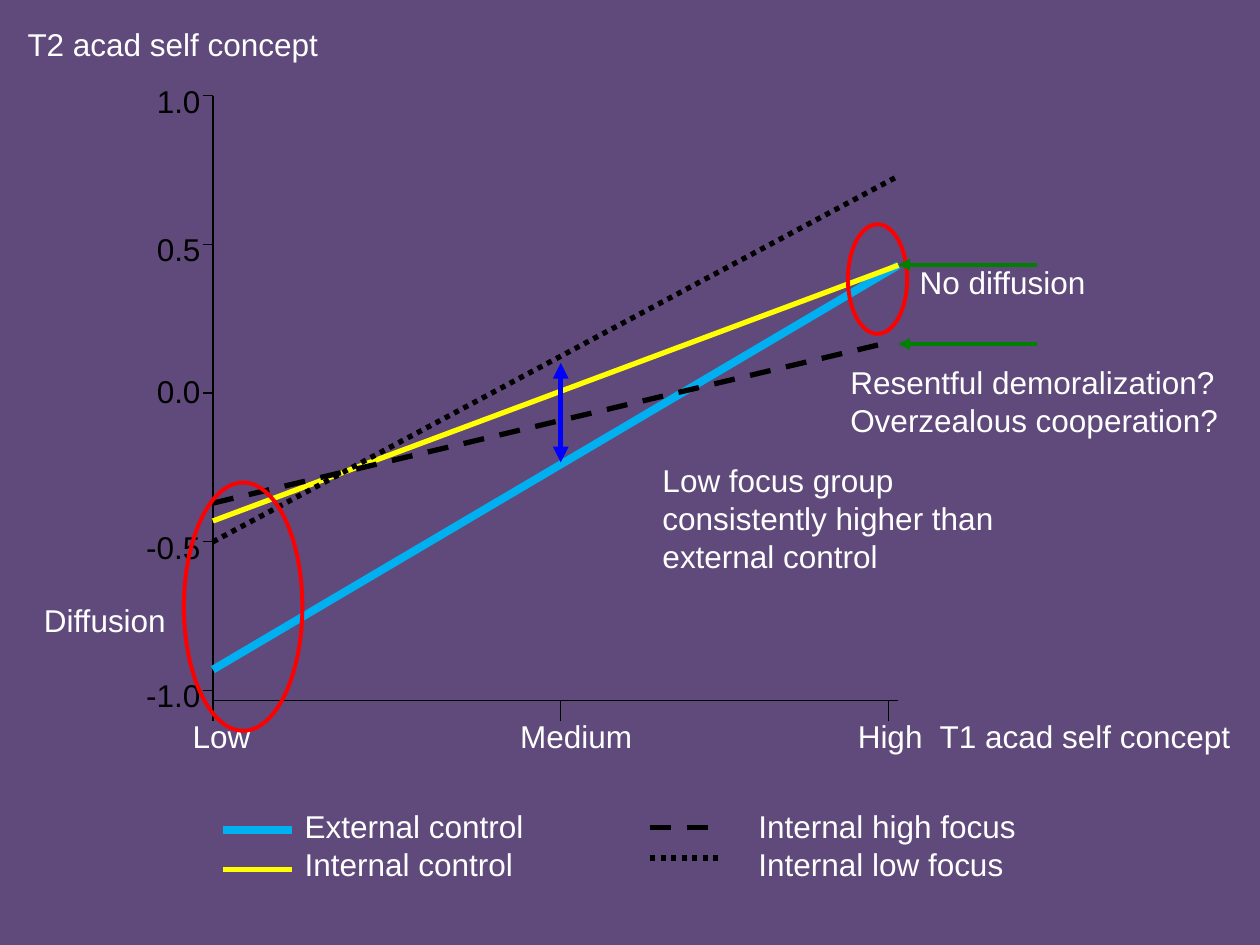
from dataclasses import dataclass

from lxml.etree import SubElement
from pptx import Presentation
from pptx.dml.color import RGBColor as RGB
from pptx.enum.dml import MSO_LINE as DASH
from pptx.enum.shapes import MSO_CONNECTOR as CONNECTOR, MSO_SHAPE as SHAPE
from pptx.enum.text import MSO_AUTO_SIZE as AUTO_SIZE, PP_ALIGN as ALIGN
from pptx.oxml.ns import qn
from pptx.util import Inches, Pt


@dataclass(frozen=True)
class Theme:
    background: str = "604A7B"
    text: str = "FFFFFF"
    axis: str = "000000"
    external: str = "00B0F0"
    internal: str = "FFFF00"
    focus: str = "000000"
    ring: str = "FF0000"
    pointer: str = "008000"
    gap: str = "0000FF"
    font: str = "Arial"
    size: int = 18
    hairline: float = 0.75
    medium: float = 2.25
    thick: float = 3
    heavy: float = 4.5


class Canvas:
    """Draws on one slide; lengths are cells of a 100 by 75 grid."""
    COLS, ROWS = 100, 75

    def __init__(self, prs, theme):
        self.theme = theme
        self.col = prs.slide_width / self.COLS
        self.row = prs.slide_height / self.ROWS
        self.slide = prs.slides.add_slide(prs.slide_layouts[6])
        fill = self.slide.background.fill
        fill.solid()
        fill.fore_color.rgb = RGB.from_string(theme.background)

    def place(self, x, y):
        return round(x * self.col), round(y * self.row)

    def line(self, start, end, color, width, dash=None, arrows=()):
        """arrows holds "headEnd" (at start) and/or "tailEnd" (at end)."""
        sp = self.slide.shapes.add_connector(
            CONNECTOR.STRAIGHT, *self.place(*start), *self.place(*end))
        sp.line.color.rgb = RGB.from_string(color)
        sp.line.width = Pt(width)
        if dash is not None:
            sp.line.dash_style = dash
        ln = sp.line._get_or_add_ln()
        for arrow in arrows:
            SubElement(ln, qn(f"a:{arrow}"), type="triangle")
        SubElement(sp._element.spPr, qn("a:effectLst"))

    def ring(self, x, y, w, h):
        sp = self.slide.shapes.add_shape(
            SHAPE.OVAL, *self.place(x, y), *self.place(w, h))
        sp.shadow.inherit = False
        sp.fill.background()
        sp.line.color.rgb = RGB.from_string(self.theme.ring)
        sp.line.width = Pt(self.theme.medium)

    def text(self, lines, x, y, w, h=4, color=None, align=ALIGN.LEFT, wrap=True):
        sp = self.slide.shapes.add_textbox(*self.place(x, y), *self.place(w, h))
        tf = sp.text_frame
        tf.word_wrap = wrap
        tf.auto_size = AUTO_SIZE.SHAPE_TO_FIT_TEXT
        for i, line in enumerate(lines):
            p = tf.add_paragraph() if i else tf.paragraphs[0]
            p.alignment = align
            r = p.add_run()
            r.text = line
            r.font.name = self.theme.font
            r.font.size = Pt(self.theme.size)
            r.font.color.rgb = RGB.from_string(color or self.theme.text)


LOW, MEDIUM, HIGH, PLOT_END = 16.9, 44.5, 70.5, 71.3
BASE = 55.6


def y_at(value):
    return 31.2 - 23.6 * value


def draw_axes(c):
    t = c.theme
    lines = [((LOW, BASE), (PLOT_END, BASE)), ((LOW, y_at(1)), (LOW, BASE))]
    lines += [((x, BASE), (x, BASE + 1.6)) for x in (LOW, MEDIUM, HIGH)]
    lines += [((LOW, y_at(v)), (LOW - 0.8, y_at(v))) for v in (1, 0.5, 0, -0.5, -1)]
    for start, end in lines:
        c.line(start, end, t.axis, t.hairline)


def draw_series(c):
    t = c.theme
    for first, last, end, color, width, dash in (
            (-0.93, 0.43, PLOT_END, t.external, t.heavy, None),
            (-0.43, 0.43, PLOT_END, t.internal, t.thick, None),
            (-0.5, 0.73, PLOT_END, t.focus, t.thick, DASH.ROUND_DOT),
            (-0.37, 0.17, HIGH, t.focus, t.thick, DASH.DASH)):
        c.line((LOW, y_at(first)), (end, y_at(last)), color, width, dash)


def draw_legend(c):
    t = c.theme
    for x, y, color, width, dash in (
            (17.7, 65.9, t.external, t.heavy, None),
            (17.7, 69, t.internal, t.thick, None),
            (51.6, 65.7, t.focus, t.thick, DASH.DASH),
            (51.6, 68.1, t.focus, t.thick, DASH.ROUND_DOT)):
        c.line((x, y), (x + 5.5, y), color, width, dash)
    c.text(["External control", "Internal control"], 23.2, 63.6, 24.6, 7)
    c.text(["Internal high focus", "Internal low focus"], 59.2, 63.6, 25.4, 7)


def draw_axis_labels(c):
    for value, lift in ((1, 1.6), (0.5, 1.6), (0, 2.2), (-0.5, 1.6), (-1, 1.6)):
        w = 6.3 if value < 0 else 5.5
        c.text([f"{value:.1f}"], LOW - w, y_at(value) - lift, w,
               color=c.theme.axis, align=ALIGN.RIGHT, wrap=False)
    for label, x, w in (("Low", 14.3, 6.8), ("Medium", 40.3, 11.2),
                        ("High", 67.1, 8), ("T1 acad self concept", 73.6, 25.4)):
        c.text([label], x, BASE + 0.8, w)
    c.text(["T2 acad self concept"], 1.2, 1.5, 25.1, wrap=False)


def draw_notes(c):
    t = c.theme
    c.ring(14.6, 38.3, 9.4, 19.7)
    c.text(["Diffusion"], 2.5, 47.2, 13.6)
    c.ring(67.3, 17.8, 4.7, 8.7)
    c.text(["No diffusion"], 72, 20.4, 15.2, wrap=False)
    c.line((MEDIUM, 28.8), (MEDIUM, 36.7), t.gap, t.thick,
           arrows=("headEnd", "tailEnd"))
    c.text(["Low focus group consistently higher than external control"],
           51.6, 36.1, 28.6, 10)
    for y in (21, 27.3):
        c.line((PLOT_END, y), (PLOT_END + 11, y), t.pointer, t.medium,
               arrows=("headEnd",))
    c.text(["Resentful demoralization?", "Overzealous cooperation?"],
           66.5, 28.3, 31.5, 7)


def main():
    prs = Presentation()
    prs.slide_width, prs.slide_height = Inches(10), Inches(7.5)
    c = Canvas(prs, Theme())
    for draw in (draw_axes, draw_series, draw_legend, draw_axis_labels, draw_notes):
        draw(c)
    prs.save("out.pptx")


if __name__ == "__main__":
    main()
